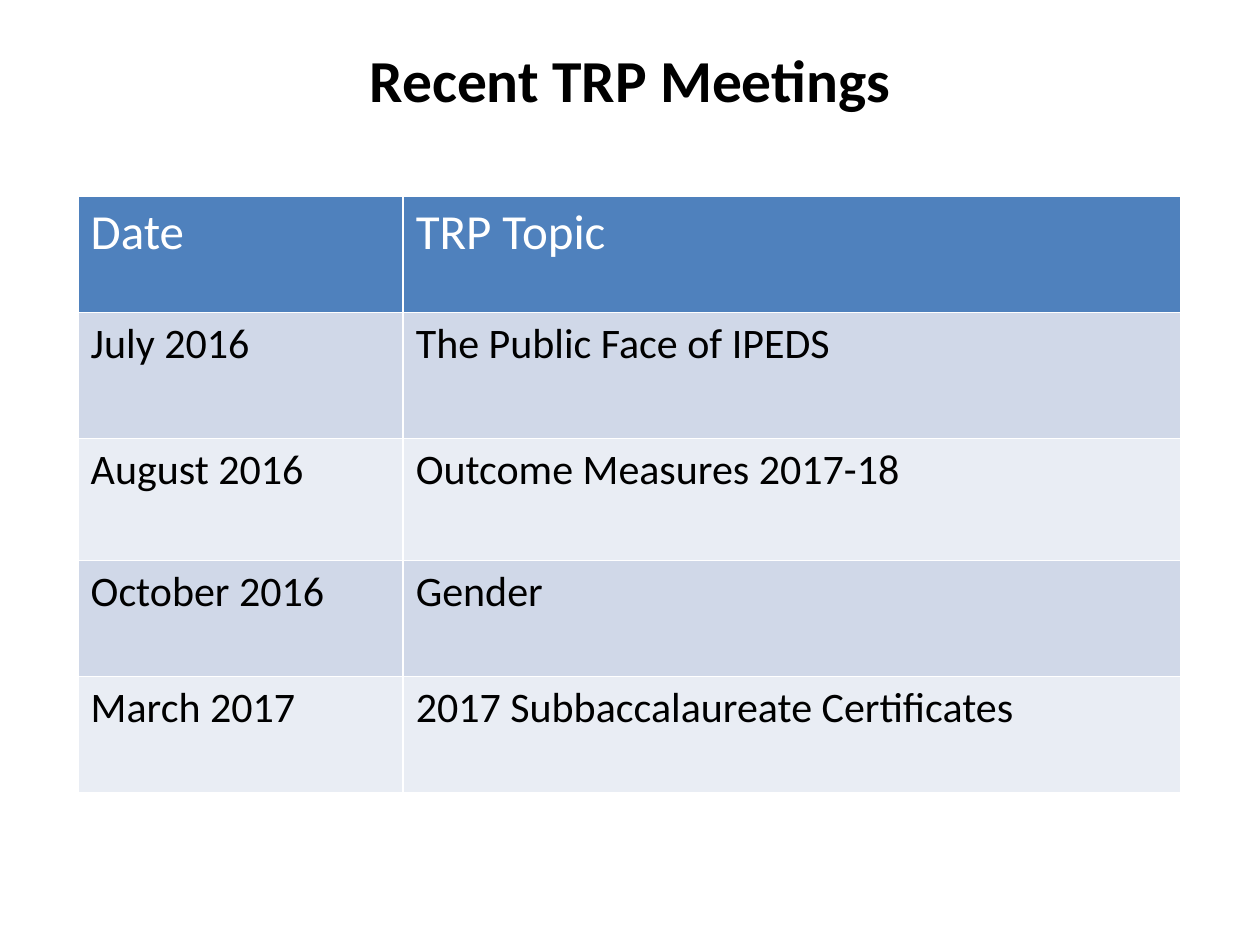
from pptx import Presentation
from pptx.dml.color import RGBColor
from pptx.enum.text import MSO_ANCHOR, PP_ALIGN
from pptx.util import Inches, Pt

TITLE = "Recent TRP Meetings"
MEETINGS = [
    ("Date", "TRP Topic"),
    ("July 2016", "The Public Face of IPEDS"),
    ("August 2016", "Outcome Measures 2017-18"),
    ("October 2016", "Gender"),
    ("March 2017", "2017 Subbaccalaureate Certificates"),
]
COL_WIDTHS = (2.58, 6.17)
ROW_HEIGHTS = (0.92, 1, 0.97, 0.92, 0.92)

THEME = {
    "font": "Calibri",
    "title_size": 34, "header_size": 28, "body_size": 24,
    "text": "000000", "header_text": "FFFFFF", "header_fill": "4F81BD",
    "bands": ("D0D8E8", "E9EDF4"),
}


def write(tf, text, size, color=THEME["text"], bold=False, align=PP_ALIGN.LEFT):
    p = tf.paragraphs[0]
    p.alignment = align
    r = p.add_run()
    r.text = text
    r.font.name = THEME["font"]
    r.font.size = Pt(size)
    r.font.bold = bold
    r.font.color.rgb = RGBColor.from_string(color)


def add_title(s):
    title = s.shapes.title
    title.left, title.top = Inches(0.5), Inches(0)
    title.width, title.height = Inches(9), Inches(1.25)
    tf = title.text_frame
    tf.vertical_anchor = MSO_ANCHOR.MIDDLE
    write(tf, TITLE, THEME["title_size"], bold=True, align=PP_ALIGN.CENTER)


def add_meetings(s):
    table = s.shapes.add_table(
        len(MEETINGS), len(COL_WIDTHS), Inches(0.62), Inches(1.56),
        Inches(sum(COL_WIDTHS)), Inches(sum(ROW_HEIGHTS))).table
    for column, width in zip(table.columns, COL_WIDTHS):
        column.width = Inches(width)
    for i, (row, height, texts) in enumerate(zip(table.rows, ROW_HEIGHTS, MEETINGS)):
        row.height = Inches(height)
        if i == 0:
            fill, color, size = THEME["header_fill"], THEME["header_text"], THEME["header_size"]
        else:
            fill, color, size = THEME["bands"][(i - 1) % 2], THEME["text"], THEME["body_size"]
        for cell, text in zip(row.cells, texts):
            cell.fill.solid()
            cell.fill.fore_color.rgb = RGBColor.from_string(fill)
            write(cell.text_frame, text, size, color)


def main():
    prs = Presentation()
    prs.slide_width, prs.slide_height = Inches(10), Inches(7.5)
    s = prs.slides.add_slide(prs.slide_layouts[5])
    add_title(s)
    add_meetings(s)
    prs.save("out.pptx")


if __name__ == "__main__":
    main()
